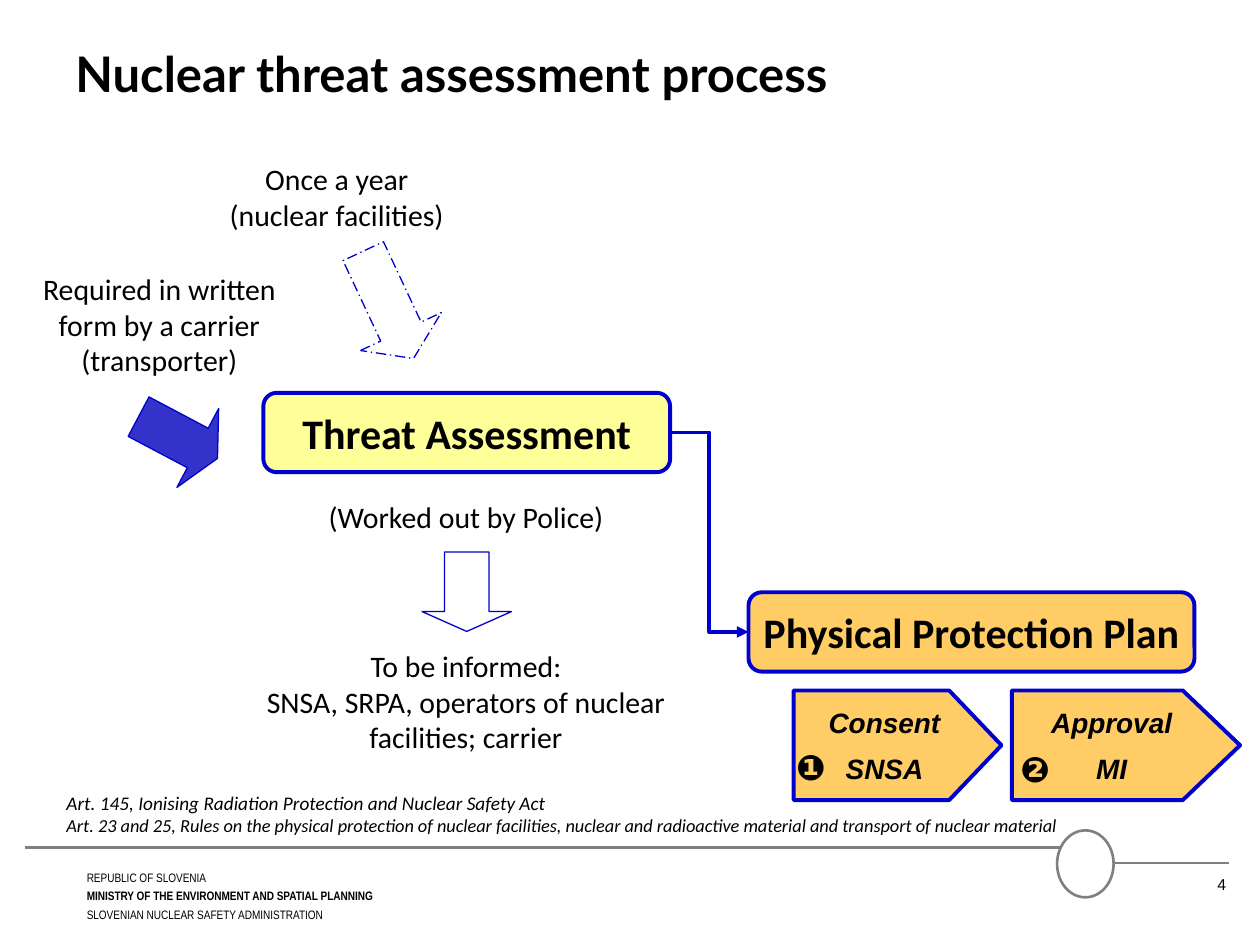
from dataclasses import dataclass
from typing import Optional

from lxml.etree import SubElement
from pptx import Presentation
from pptx.dml.color import RGBColor
from pptx.enum.dml import MSO_LINE
from pptx.enum.shapes import MSO_CONNECTOR, MSO_SHAPE
from pptx.enum.text import MSO_ANCHOR, PP_ALIGN
from pptx.oxml.ns import qn
from pptx.util import Cm, Pt

BLACK = RGBColor(0x00, 0x00, 0x00)
WHITE = RGBColor(0xFF, 0xFF, 0xFF)
GREY = RGBColor(0x80, 0x80, 0x80)
BLUE = RGBColor(0x00, 0x00, 0xCC)
ARROW_BLUE = RGBColor(0x33, 0x33, 0xCC)
YELLOW = RGBColor(0xFF, 0xFF, 0x99)
ORANGE = RGBColor(0xFF, 0xCC, 0x66)


@dataclass(frozen=True)
class Frame:
    """Left, top, width and height in centimetres."""
    left: float
    top: float
    width: float
    height: float

    def lengths(self) -> tuple:
        return Cm(self.left), Cm(self.top), Cm(self.width), Cm(self.height)


@dataclass(frozen=True)
class Style:
    size: float
    font: str = "Calibri"
    bold: bool = False
    italic: bool = False
    align: PP_ALIGN = PP_ALIGN.LEFT
    gap: float = 0


@dataclass(frozen=True)
class Label:
    frame: Frame
    lines: tuple
    style: Style
    wrap: bool = True


@dataclass(frozen=True)
class Block:
    frame: Frame
    kind: MSO_SHAPE
    adjustment: float
    fill: Optional[RGBColor] = None
    line_width: float = 2.25
    lines: tuple = ()
    style: Optional[Style] = None
    rotation: float = 0
    dash: Optional[MSO_LINE] = None


NOTE = Style(17, align=PP_ALIGN.CENTER)
STAGE = Style(24, bold=True, align=PP_ALIGN.CENTER)
STEP = Style(16, "Arial", bold=True, italic=True, align=PP_ALIGN.CENTER, gap=7.3)
NUMBER = Style(20, "Arial", bold=True)
CITATION = Style(11, italic=True)

LABELS = [
    Label(Frame(1.27, 0.76, 22.86, 1.96), ("Nuclear threat assessment process",),
          Style(28, "Lato", bold=True)),
    Label(Frame(23.24, 17.5, 1.73, 0.79), ("4",), Style(9, "Arial", align=PP_ALIGN.RIGHT)),
    Label(Frame(4.29, 3.12, 5, 1.7), ("Once a year", "(nuclear facilities)"), NOTE),
    Label(Frame(0.51, 5.33, 5.41, 2.41),
          ("Required in written form by a carrier (transporter)",), NOTE),
    Label(Frame(4.9, 9.93, 8.99, 0.97), ("(Worked out by Police)",), NOTE),
    Label(Frame(4.9, 12.93, 8.99, 2.41),
          ("To be informed:", "SNSA, SRPA, operators of nuclear facilities; carrier"), NOTE),
]
NUMBERS = [
    Label(Frame(15.8, 14.91, 1.17, 1.04), ("❶",), NUMBER, wrap=False),
    Label(Frame(20.32, 14.94, 1.17, 1.04), ("❷",), NUMBER, wrap=False),
]
CITATIONS = Label(Frame(1.09, 15.82, 23.6, 1.3), (
    "Art. 145, Ionising Radiation Protection and Nuclear Safety Act",
    "Art. 23 and 25, Rules on the physical protection of nuclear facilities, "
    "nuclear and radioactive material and transport of nuclear material"), CITATION)
FOOTER = Label(Frame(1.5, 17.37, 16.61, 1.68), (
    "REPUBLIC OF SLOVENIA",
    "MINISTRY OF THE ENVIRONMENT AND SPATIAL PLANNING",
    "SLOVENIAN NUCLEAR SAFETY ADMINISTRATION"), Style(7, "Arial Narrow", gap=3))

THREAT = Block(Frame(5.31, 7.92, 8.2, 1.6), MSO_SHAPE.ROUNDED_RECTANGLE, 0.167, YELLOW,
               lines=("Threat Assessment",), style=STAGE)
PLAN = Block(Frame(15.09, 11.94, 8.99, 1.6), MSO_SHAPE.ROUNDED_RECTANGLE, 0.167, ORANGE,
             lines=("Physical Protection Plan",), style=STAGE)
STEPS = [
    Block(Frame(16, 13.92, 4.19, 2.21), MSO_SHAPE.PENTAGON, 0.477, ORANGE,
          lines=("Consent", "SNSA"), style=STEP),
    Block(Frame(20.4, 13.92, 4.6, 2.21), MSO_SHAPE.PENTAGON, 0.523, ORANGE,
          lines=("Approval", "MI"), style=STEP),
]
ARROWS = [
    Block(Frame(8.51, 11.13, 1.8, 1.6), MSO_SHAPE.DOWN_ARROW, 0.25, line_width=0.75),
    Block(Frame(2.69, 7.92, 1.8, 1.8), MSO_SHAPE.DOWN_ARROW, 0.25, ARROW_BLUE, 0.75,
          rotation=297.9),
    Block(Frame(6.93, 4.95, 1.8, 2.39), MSO_SHAPE.DOWN_ARROW, 0.333, line_width=0.75,
          rotation=334.9, dash=MSO_LINE.LONG_DASH_DOT),
]


def write_lines(text_frame, lines: tuple, style: Style) -> None:
    for index, line in enumerate(lines):
        para = text_frame.paragraphs[0] if index == 0 else text_frame.add_paragraph()
        para.text = line
        para.alignment = style.align
        if index and style.gap:
            para.space_before = Pt(style.gap)
        para.font.name = style.font
        para.font.size = Pt(style.size)
        para.font.bold = style.bold
        para.font.italic = style.italic
        para.font.color.rgb = BLACK


def draw_label(page, label: Label):
    box = page.shapes.add_textbox(*label.frame.lengths())
    box.text_frame.word_wrap = label.wrap
    write_lines(box.text_frame, label.lines, label.style)
    return box


def draw_block(page, block: Block):
    shape = page.shapes.add_shape(block.kind, *block.frame.lengths())
    shape.shadow.inherit = False
    # The last adjustment is the corner radius or the length of the point
    shape.adjustments[len(shape.adjustments) - 1] = block.adjustment
    shape.rotation = block.rotation
    if block.fill is None:
        shape.fill.background()
    else:
        shape.fill.solid()
        shape.fill.fore_color.rgb = block.fill
    shape.line.color.rgb = BLUE
    shape.line.width = Pt(block.line_width)
    if block.dash is not None:
        shape.line.dash_style = block.dash
    if block.lines:
        shape.text_frame.word_wrap = False
        shape.text_frame.vertical_anchor = MSO_ANCHOR.MIDDLE
        write_lines(shape.text_frame, block.lines, block.style)
    return shape


def draw_line(page, kind: MSO_CONNECTOR, start: tuple, end: tuple, color: RGBColor, width: float):
    line = page.shapes.add_connector(kind, *map(Cm, start + end))
    line.line.color.rgb = color
    line.line.width = Pt(width)
    SubElement(line.element.spPr, qn("a:effectLst"))
    return line


def draw_footer(page) -> None:
    for start, end in (((0.51, 17.09), (21.79, 17.09)), ((22.3, 17.4), (24.77, 17.4))):
        draw_line(page, MSO_CONNECTOR.STRAIGHT, start, end, GREY, 1.5)
    # Plain oval between the two rules
    oval = page.shapes.add_shape(MSO_SHAPE.OVAL, *Frame(21.31, 16.74, 1.14, 1.35).lengths())
    oval.shadow.inherit = False
    oval.fill.solid()
    oval.fill.fore_color.rgb = WHITE
    oval.line.color.rgb = GREY
    oval.line.width = Pt(1.5)
    box = draw_label(page, FOOTER)
    box.text_frame.vertical_anchor = MSO_ANCHOR.MIDDLE
    box.text_frame.margin_bottom = Cm(0.38)
    for para in box.text_frame.paragraphs:
        para.line_spacing = 0.9
    box.text_frame.paragraphs[1].font.bold = True


def draw_process(page) -> None:
    threat, plan = (draw_block(page, block) for block in (THREAT, PLAN))
    link = draw_line(page, MSO_CONNECTOR.ELBOW, (13.51, 8.72), (15.09, 12.74), BLUE, 2.25)
    link.begin_connect(threat, 3)
    link.end_connect(plan, 1)
    SubElement(link.line._get_or_add_ln(), qn("a:tailEnd"), type="triangle")
    for block in ARROWS + STEPS:
        draw_block(page, block)


def main() -> None:
    deck = Presentation()
    deck.slide_width, deck.slide_height = Cm(25.4), Cm(19.05)
    page = deck.slides.add_slide(deck.slide_layouts[6])
    draw_footer(page)
    draw_process(page)
    for label in LABELS + NUMBERS:
        draw_label(page, label)
    citations = draw_label(page, CITATIONS)
    citations.text_frame.paragraphs[1].font.size = Pt(10.5)
    deck.save("out.pptx")


if __name__ == "__main__":
    main()
